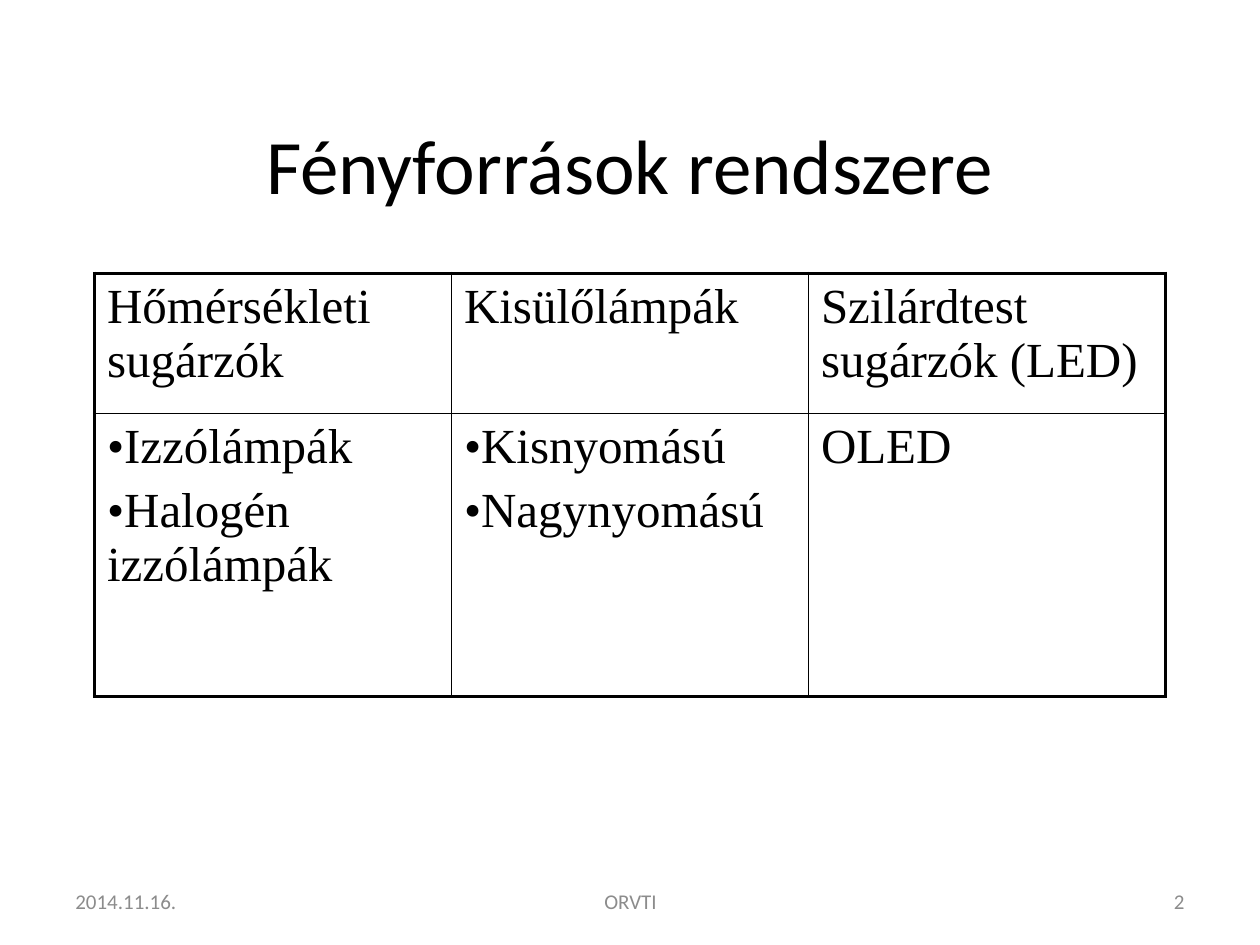
from pptx import Presentation
from pptx.dml.color import RGBColor
from pptx.enum.text import MSO_ANCHOR as Anchor, PP_ALIGN as Align
from pptx.oxml.ns import qn
from pptx.util import Inches, Pt
from lxml.etree import SubElement

COLORS = {"text": "000000", "footer": "8C8C8C", "border": "000000"}
TABLE_FONT = "Times New Roman"
ROWS = [
    [["Hőmérsékleti sugárzók"], ["Kisülőlámpák"], ["Szilárdtest sugárzók (LED)"]],
    [["Izzólámpák", "Halogén izzólámpák"], ["Kisnyomású", "Nagynyomású"], ["OLED"]],
]
ROW_HEIGHTS = [1.11, 2.25]
FOOTERS = [
    (0.5, 2.33, "2014.11.16.", Align.LEFT),
    (3.42, 3.17, "ORVTI", Align.CENTER),
    (7.17, 2.33, "2", Align.RIGHT),
]


def add_span(para, text, size, font, color):
    span = para.add_run()
    span.text = text
    span.font.size = Pt(size)
    span.font.name = font
    span.font.color.rgb = RGBColor.from_string(COLORS[color])


def add_label(page, left, top, width, height, text, size, color, align):
    box = page.shapes.add_textbox(*map(Inches, (left, top, width, height)))
    frame = box.text_frame
    frame.word_wrap = True
    frame.vertical_anchor = Anchor.MIDDLE
    para = frame.paragraphs[0]
    para.alignment = align
    add_span(para, text, size, "Calibri", color)


def add_bullet(para):
    props = para._p.get_or_add_pPr()
    props.set("marL", "0")
    props.set("indent", "0")
    SubElement(props, qn("a:buFont"), typeface=TABLE_FONT)
    SubElement(props, qn("a:buChar"), char="•")


def set_borders(cell, outer_sides):
    props = cell._tc.get_or_add_tcPr()
    for side in "LRTB":
        width = Pt(2.25 if side in outer_sides else 1)
        line = SubElement(props, qn(f"a:ln{side}"), w=str(width))
        fill = SubElement(line, qn("a:solidFill"))
        SubElement(fill, qn("a:srgbClr"), val=COLORS["border"])


def fill_cell(cell, items, bulleted):
    frame = cell.text_frame
    for index, item in enumerate(items):
        para = frame.add_paragraph() if index else frame.paragraphs[0]
        if index:
            para.space_before = Pt(5.6)
        if bulleted:
            add_bullet(para)
        add_span(para, item, 28, TABLE_FONT, "text")


def add_light_table(page):
    row_count, column_count = len(ROWS), len(ROWS[0])
    frame = page.shapes.add_table(
        row_count, column_count,
        Inches(0.75), Inches(2.17), Inches(8.5), Inches(sum(ROW_HEIGHTS)))
    table = frame.table
    table.first_row = table.horz_banding = False
    for row, height in enumerate(ROW_HEIGHTS):
        table.rows[row].height = Inches(height)
        for column, items in enumerate(ROWS[row]):
            cell = table.cell(row, column)
            outer_sides = {
                "L": column == 0, "R": column == column_count - 1,
                "T": row == 0, "B": row == row_count - 1,
            }
            set_borders(cell, [side for side, outer in outer_sides.items() if outer])
            cell.fill.background()
            fill_cell(cell, items, bulleted=len(items) > 1)


def main():
    """Build the slide on the classification of light sources."""
    deck = Presentation()
    deck.slide_width, deck.slide_height = Inches(10), Inches(7.5)
    page = deck.slides.add_slide(deck.slide_layouts[6])
    for left, width, text, align in FOOTERS:
        add_label(page, left, 6.95, width, 0.4, text, 12, "footer", align)
    add_label(page, 0.75, 0.67, 8.5, 1.25, "Fényforrások rendszere", 44, "text", Align.CENTER)
    add_light_table(page)
    deck.save("out.pptx")


if __name__ == "__main__":
    main()
